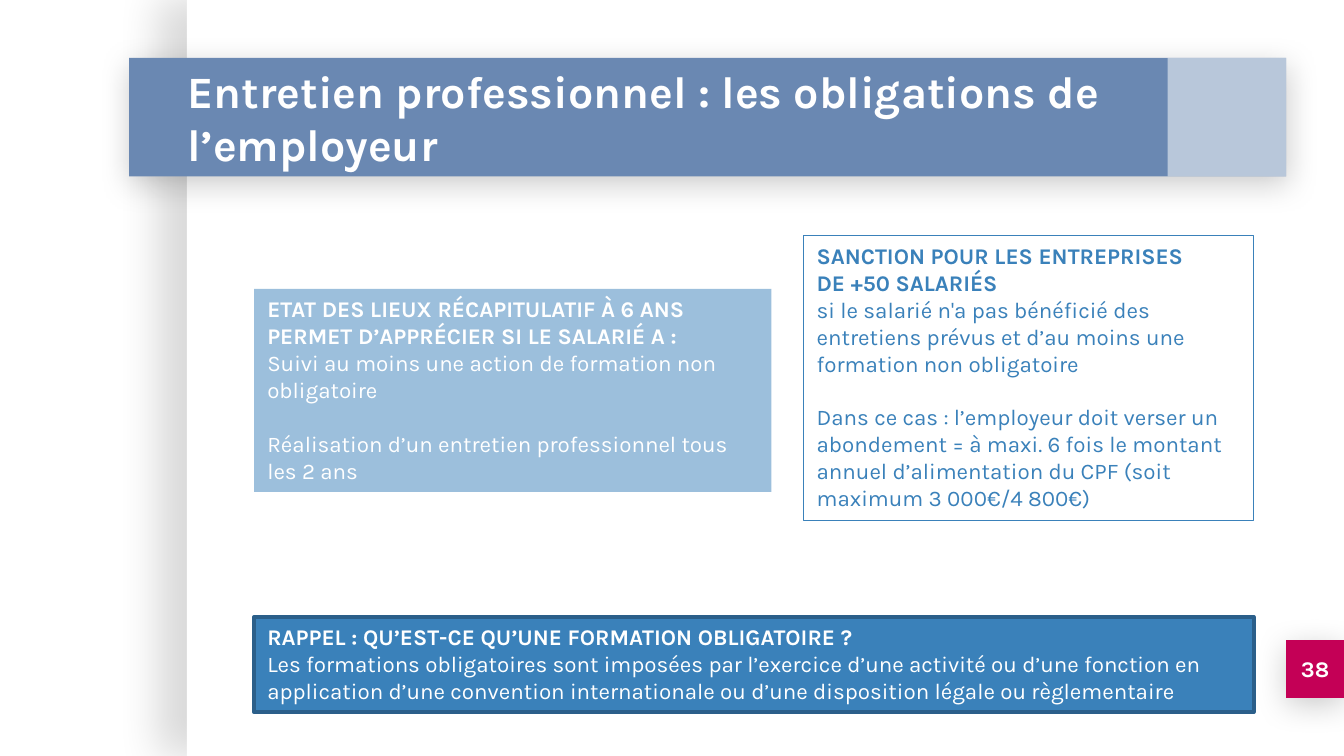
from lxml import etree
from pptx import Presentation
from pptx.dml.color import RGBColor
from pptx.enum.shapes import MSO_SHAPE
from pptx.enum.text import MSO_ANCHOR, MSO_AUTO_SIZE, PP_ALIGN
from pptx.oxml.ns import qn
from pptx.util import Inches, Pt

RECT = MSO_SHAPE.RECTANGLE
TOP, MIDDLE = MSO_ANCHOR.TOP, MSO_ANCHOR.MIDDLE
LEFT, CENTER = PP_ALIGN.LEFT, PP_ALIGN.CENTER
NO_FIT, GROW = MSO_AUTO_SIZE.NONE, MSO_AUTO_SIZE.SHAPE_TO_FIT_TEXT

WIDTH = Inches(10)
HEIGHT = WIDTH * 9 // 16
TITLE_ONLY = 5
FONT = "Karla"
WHITE, SLATE, BLUE, NAVY, PINK = "FFFFFF", "6A88B2", "3A81BA", "2B5F8A", "C40056"

# Shadows: opacity %, blur pt, distance pt, direction in degrees
SIDE_SHADOW = (15, 22.5, 15, 180)
DROP_SHADOW = (20, 16.9, 3.8, 90)

# Horizontal and vertical guides, in percent of the slide width
PANEL_LEFT, BAND_LEFT, BAND_RIGHT = 13.9, 9.6, 95.7
BAND_TOP, BAND_HEIGHT = 4.3, 8.83
BADGE = 100 - BAND_RIGHT
BOX_LEFT, BOX_RIGHT = 18.9, 93.28
LINE_GAP = Pt(14.4)  # one empty line of body text


def rgb(hex_code):
    return RGBColor.from_string(hex_code)


def share(*percents):
    return [round(WIDTH * percent / 100) for percent in percents]


def apply(target, **values):
    for name, value in values.items():
        setattr(target, name, value)


def set_opacity(shape, percent):
    color = shape.fill._xPr.find(qn("a:solidFill"))[0]
    etree.SubElement(color, qn("a:alpha"), val=str(percent * 1000))


def set_shadow(shape, opacity, blur, distance, degrees):
    effects = shape._element.spPr.find(qn("a:effectLst"))
    shadow = etree.SubElement(
        effects, qn("a:outerShdw"), blurRad=str(Pt(blur)), dist=str(Pt(distance)),
        dir=str(degrees * 60000), algn="ctr", rotWithShape="0")
    color = etree.SubElement(shadow, qn("a:srgbClr"), val="000000")
    etree.SubElement(color, qn("a:alpha"), val=str(opacity * 1000))


def add_block(slide, area, fill=None, opacity=100, line=None, shadow=None):
    block = slide.shapes.add_shape(RECT, *share(*area))
    block.shadow.inherit = False
    if fill:
        block.fill.solid()
        block.fill.fore_color.rgb = rgb(fill)
        if opacity < 100:
            set_opacity(block, opacity)
    else:
        block.fill.background()
    if line:
        color, weight = line
        block.line.color.rgb = rgb(color)
        block.line.width = Pt(weight)
    else:
        block.line.fill.background()
    if shadow:
        set_shadow(block, *shadow)
    return block


def write(paragraph, text, size, color, bold, align=LEFT):
    paragraph.text = text
    paragraph.alignment = align
    for run in paragraph.runs:
        apply(run.font, name=FONT, size=Pt(size), bold=bold)
        run.font.color.rgb = rgb(color)


def add_backdrop(slide):
    add_block(slide, (PANEL_LEFT, 0, 100 - PANEL_LEFT, 56.25), WHITE, shadow=SIDE_SHADOW)
    add_block(slide, (BAND_LEFT, BAND_TOP, BAND_RIGHT - BAND_LEFT, BAND_HEIGHT),
              SLATE, shadow=DROP_SHADOW)
    add_block(slide, (BAND_RIGHT - BAND_HEIGHT, BAND_TOP, BAND_HEIGHT, BAND_HEIGHT),
              WHITE, opacity=53)


def add_title(slide, text):
    title = slide.shapes.title
    left, top, width, height = share(12.94, BAND_TOP, 73.7, BAND_HEIGHT)
    apply(title, left=left, top=top, width=width, height=height)
    apply(title.text_frame, auto_size=NO_FIT, word_wrap=True, vertical_anchor=MIDDLE,
          margin_top=Inches(0.1), margin_bottom=Inches(0.1))
    write(title.text_frame.paragraphs[0], text, 24, WHITE, True)
    # Bring the title in front of its band
    slide.shapes._spTree.append(title._element)


def add_page_number(slide, number):
    badge = add_block(slide, (BAND_RIGHT, 47.63, BADGE, BADGE), PINK, shadow=DROP_SHADOW)
    apply(badge.text_frame, word_wrap=False, vertical_anchor=MIDDLE)
    write(badge.text_frame.paragraphs[0], number, 12, WHITE, True, CENTER)


def add_note(slide, area, headings, details, color, **style):
    """Box with bold headings, then details set one empty line apart."""
    frame = add_block(slide, area, **style).text_frame
    apply(frame, word_wrap=True, auto_size=GROW, vertical_anchor=TOP)
    for index, text in enumerate(headings + details):
        paragraph = frame.paragraphs[0] if index == 0 else frame.add_paragraph()
        write(paragraph, text, 12, color, index < len(headings))
        if index > len(headings):
            paragraph.space_before = LINE_GAP


def main():
    prs = Presentation()
    apply(prs, slide_width=WIDTH, slide_height=HEIGHT)
    slide = prs.slides.add_slide(prs.slide_layouts[TITLE_ONLY])

    add_backdrop(slide)
    add_title(slide, "Entretien professionnel : les obligations de l’employeur")
    add_page_number(slide, "38")

    # Six-year review
    add_note(slide, (BOX_LEFT, 21.5, 38.5, 15.1),
             ["ETAT DES LIEUX RÉCAPITULATIF À 6 ANS",
              "PERMET D’APPRÉCIER SI LE SALARIÉ A :"],
             ["Suivi au moins une action de formation non obligatoire",
              "Réalisation d’un entretien professionnel tous les 2 ans"],
             WHITE, fill=BLUE, opacity=50)
    # Penalty
    add_note(slide, (59.78, 17.53, BOX_RIGHT - 59.78, 21.2),
             ["SANCTION POUR LES ENTREPRISES \vDE +50 SALARIÉS"],
             ["si le salarié n'a pas bénéficié des entretiens prévus et d’au moins une "
              "formation non obligatoire",
              "Dans ce cas : l’employeur doit verser un abondement = à maxi. 6 fois le "
              "montant annuel d’alimentation du CPF (soit maximum 3 000€/4 800€)"],
             BLUE, line=(BLUE, 0.75))
    # Reminder
    add_note(slide, (BOX_LEFT, 45.9, BOX_RIGHT - BOX_LEFT, 7.1),
             ["RAPPEL : QU’EST-CE QU’UNE FORMATION OBLIGATOIRE ?"],
             ["Les formations obligatoires sont imposées par l’exercice d’une activité ou "
              "d’une fonction en application d’une convention internationale ou d’une "
              "disposition légale ou règlementaire"],
             WHITE, fill=BLUE, line=(NAVY, 2))

    prs.save("out.pptx")


if __name__ == "__main__":
    main()
